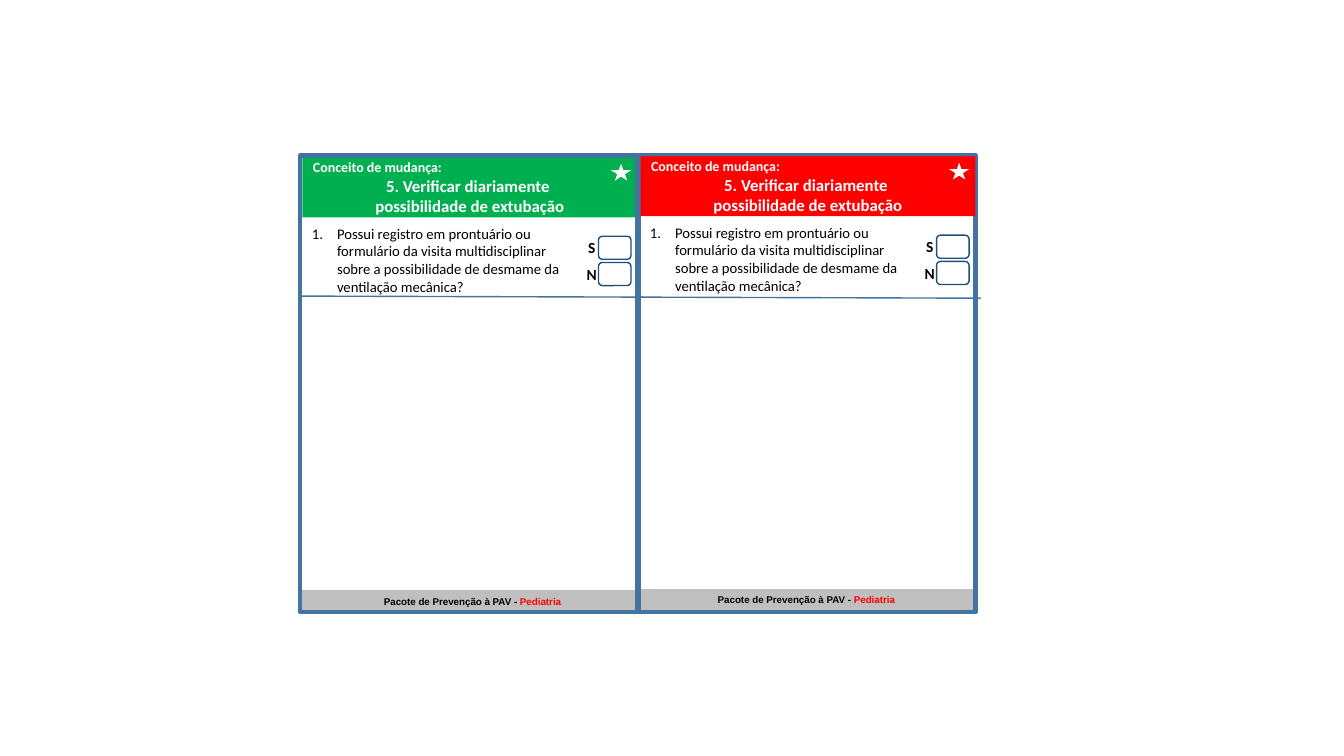
from lxml import etree
from pptx import Presentation
from pptx.dml.color import RGBColor
from pptx.enum.shapes import MSO_CONNECTOR, MSO_SHAPE
from pptx.enum.text import MSO_ANCHOR, MSO_AUTO_SIZE, PP_ALIGN
from pptx.oxml.ns import qn
from pptx.util import Pt

PX = 9525
RECT, ROUNDED, STAR = MSO_SHAPE.RECTANGLE, MSO_SHAPE.ROUNDED_RECTANGLE, MSO_SHAPE.STAR_5_POINT
LEFT, CENTER = PP_ALIGN.LEFT, PP_ALIGN.CENTER

BLACK = RGBColor(0, 0, 0)
WHITE = RGBColor(255, 255, 255)
GREEN = RGBColor(0x00, 0xB0, 0x50)
RED = RGBColor(255, 0, 0)
GREY = RGBColor(0xBF, 0xBF, 0xBF)
STEEL = RGBColor(0x43, 0x73, 0x9E)
NAVY = RGBColor(0x1F, 0x4E, 0x79)

QUESTION = ("Possui registro em prontuário ou formulário da visita multidisciplinar "
            "sobre a possibilidade de desmame da ventilação mecânica?")

prs = Presentation()
prs.slide_width, prs.slide_height = 1280 * PX, 720 * PX
slide = prs.slides.add_slide(prs.slide_layouts.get_by_name("Comparison"))
shapes = slide.shapes
shapes.title.element.getparent().remove(shapes.title.element)


def add_box(kind, x, y, w, h, fill=None, line=None, weight=1):
    box = shapes.add_shape(kind, x * PX, y * PX, w * PX, h * PX)
    box.shadow.inherit = False
    if fill is None:
        box.fill.background()
    else:
        box.fill.solid()
        box.fill.fore_color.rgb = fill
    if line is None:
        box.line.fill.background()
    else:
        box.line.color.rgb = line
        box.line.width = Pt(weight)
    return box


def write(holder, paragraphs, font="Calibri", bold=True, inset=10):
    """Each paragraph is (alignment, size, [(text, colour), ...])."""
    frame = holder.text_frame
    settings = {"word_wrap": True, "auto_size": MSO_AUTO_SIZE.NONE,
                "vertical_anchor": MSO_ANCHOR.MIDDLE,
                "margin_left": inset * PX, "margin_right": inset * PX,
                "margin_top": 0, "margin_bottom": 0}
    for name, value in settings.items():
        setattr(frame, name, value)
    for i, (alignment, size, runs) in enumerate(paragraphs):
        paragraph = frame.add_paragraph() if i else frame.paragraphs[0]
        paragraph.alignment = alignment
        paragraph.line_spacing = 1.0
        paragraph.space_before = paragraph.space_after = Pt(0)
        for text, colour in runs:
            run = paragraph.add_run()
            run.text = text
            run.font.name, run.font.size, run.font.bold = font, Pt(size), bold
            run.font.color.rgb = colour


# Two cards: horizontal shift, vertical shift, footer shift, heading colour, placeholders
cards = [(0, 0, 0, GREEN, 1, 2), (322, -1, 318, RED, 3, 4)]

# Footers, under the card frames
for dx, dy, footer_dx, colour, heading_idx, question_idx in cards:
    footer = add_box(RECT, 287 + footer_dx, 562 + dy, 326, 21, GREY)
    write(footer, [(CENTER, 7, [("Pacote de Prevenção à PAV - ", BLACK), ("Pediatria", RED)])],
          font="Arial")

# Card frames
for dx, *_ in cards:
    add_box(RECT, 286 + dx, 148, 321, 435, line=STEEL, weight=3)

for dx, dy, footer_dx, colour, heading_idx, question_idx in cards:
    # Heading
    heading = slide.placeholders[heading_idx]
    heading.left, heading.top = (288 + dx) * PX, (150 + dy) * PX
    heading.width, heading.height = 319 * PX, 57 * PX
    heading.fill.solid()
    heading.fill.fore_color.rgb = colour
    write(heading, [(LEFT, 10, [("Conceito de mudança:", WHITE)]),
                    (CENTER, 12, [("5. Verificar diariamente ", WHITE)]),
                    (CENTER, 12, [("possibilidade de extubação", WHITE)])])
    if colour == RED:  # the red heading lies over its frame
        shapes.element.append(heading.element)
    add_box(STAR, 582 + dx, 156 + dy, 19, 16, WHITE)

    # Numbered question
    question = slide.placeholders[question_idx]
    question.left, question.top = (287 + dx) * PX, (217 + dy) * PX
    question.width, question.height = 269 * PX, 61 * PX
    write(question, [(LEFT, 10.5, [(QUESTION, BLACK)])], bold=False)
    numbering = question.text_frame.paragraphs[0]._p.get_or_add_pPr()
    numbering.set("marL", str(24 * PX))
    numbering.set("indent", str(-24 * PX))
    etree.SubElement(numbering, qn("a:buAutoNum"), type="arabicPeriod")

    # Yes and no boxes
    for letter, box_y, letter_y in (("S", 225, 228), ("N", 250, 254)):
        add_box(ROUNDED, 570 + dx, box_y + dy, 31, 22, line=NAVY)
        label = shapes.add_textbox((552 + dx) * PX, (letter_y + dy) * PX, 23 * PX, 15 * PX)
        write(label, [(CENTER, 11, [(letter, BLACK)])], inset=0)

    # Rule below the question
    rule_y = 282 - dy
    rule = shapes.add_connector(MSO_CONNECTOR.STRAIGHT, (286 + dx) * PX, rule_y * PX,
                                (612 + dx) * PX, (rule_y + 1) * PX)
    rule.line.color.rgb = STEEL
    rule.line.width = Pt(1)
    etree.SubElement(rule.element.spPr, qn("a:effectLst"))

prs.save("out.pptx")
